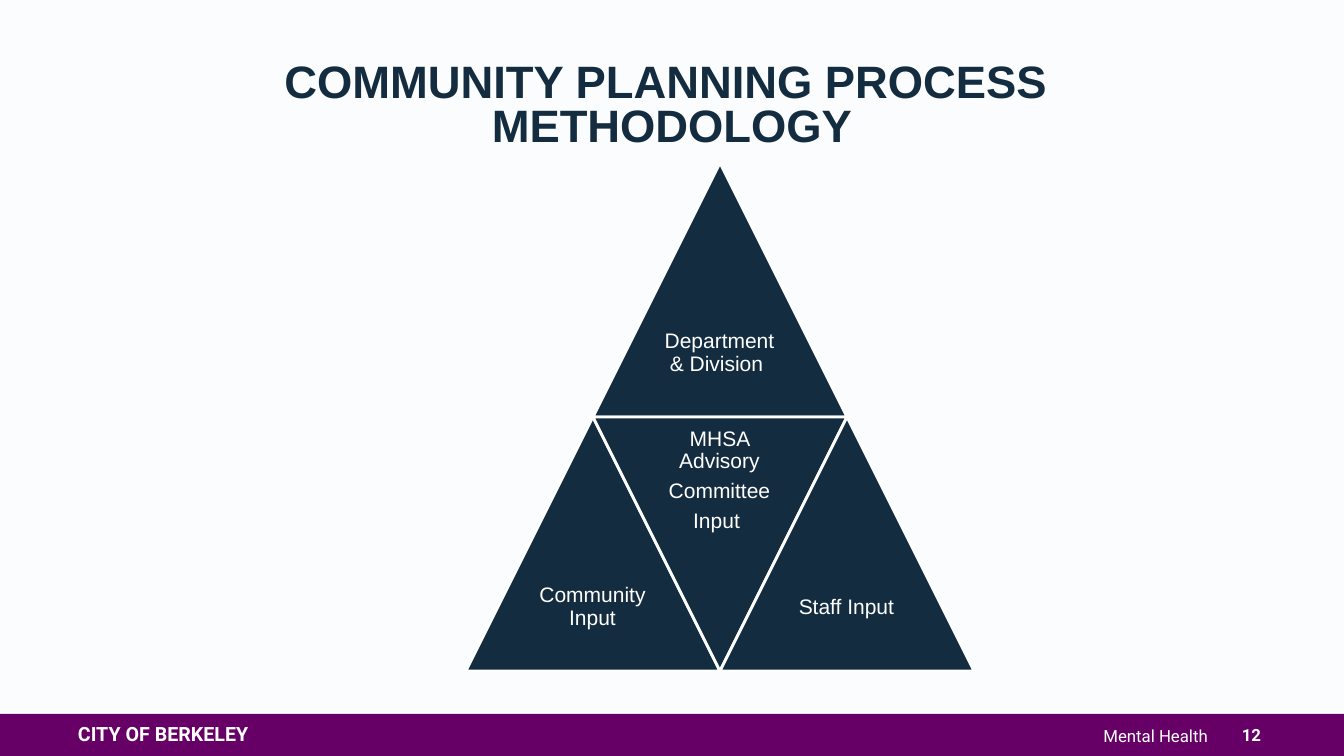
from dataclasses import dataclass

import pptx
import pptx.dml.color
import pptx.enum.shapes
import pptx.enum.text
import pptx.shapes.base
import pptx.text.text
import pptx.util

WIDTH, HEIGHT = 1344, 756
SCALE = 12192000 / WIDTH
NAVY, PURPLE, WHITE, PALE = "142C3F", "660066", "FFFFFF", "FBFCFD"
SIDE = 254
HALF = SIDE // 2
LEFT, TOP = 466, 163
BAR = 714

ALIGN = pptx.enum.text.PP_ALIGN
ANCHOR = pptx.enum.text.MSO_ANCHOR
SHAPE = pptx.enum.shapes.MSO_SHAPE


@dataclass(frozen=True)
class Style:
    size: float
    font: str = "Arial"
    color: str = WHITE
    bold: bool = False
    align: ALIGN = ALIGN.CENTER
    pitch: float = 0.9
    after: int = 0
    anchor: ANCHOR = ANCHOR.MIDDLE


@dataclass(frozen=True)
class Part:
    """One triangle; col counts half sides from the left, row whole sides from the top."""
    col: int
    row: int
    lines: tuple[str, ...]
    down: bool = False


@dataclass(frozen=True)
class Label:
    box: tuple[int, int, int, int]
    text: str
    style: Style


TITLE = Style(32.4, color=NAVY, bold=True, pitch=0.8, anchor=ANCHOR.TOP)
INPUT = Style(15, after=5)

PARTS = [
    Part(1, 0, ("Department & Division ",)),
    Part(0, 1, ("Community Input",)),
    Part(1, 1, ("MHSA Advisory", "Committee", "Input "), down=True),
    Part(2, 1, ("Staff Input",)),
]

FOOTER = [
    Label((68, 701, 252, 69), "CITY OF BERKELEY",
          Style(14, "Roboto", bold=True, align=ALIGN.LEFT)),
    Label((588, 703, 630, 69), "Mental Health",
          Style(12, "Roboto", align=ALIGN.RIGHT)),
    Label((1218, BAR, 67, HEIGHT - BAR), "12",
          Style(12, "Roboto", bold=True, pitch=1.0)),
]


def px(count: int) -> pptx.util.Emu:
    return pptx.util.Emu(round(count * SCALE))


def rgb(code: str) -> pptx.dml.color.RGBColor:
    return pptx.dml.color.RGBColor.from_string(code)


def paint(shape: pptx.shapes.base.BaseShape, color: str, edge: int = 0) -> None:
    """Give a flat fill and a white edge, or no edge when its width is 0."""
    shape.shadow.inherit = False
    shape.fill.solid()
    shape.fill.fore_color.rgb = rgb(color)
    if edge:
        shape.line.color.rgb = rgb(WHITE)
        shape.line.width = pptx.util.Pt(edge)
    else:
        shape.line.fill.background()


def write(frame: pptx.text.text.TextFrame, lines: tuple[str, ...],
          style: Style, pad: tuple[int, int] = (10, 5)) -> None:
    frame.word_wrap = True
    frame.auto_size = pptx.enum.text.MSO_AUTO_SIZE.NONE
    frame.vertical_anchor = style.anchor
    frame.margin_left = frame.margin_right = px(pad[0])
    frame.margin_top = frame.margin_bottom = px(pad[1])
    for index, line in enumerate(lines):
        para = frame.add_paragraph() if index else frame.paragraphs[0]
        para.alignment = style.align
        para.line_spacing = style.pitch
        para.space_before = pptx.util.Pt(0)
        para.space_after = pptx.util.Pt(style.after)
        run = para.add_run()
        run.text = line
        run.font.name = style.font
        run.font.size = pptx.util.Pt(style.size)
        run.font.bold = style.bold
        run.font.color.rgb = rgb(style.color)


def main() -> None:
    deck = pptx.Presentation()
    deck.slide_width, deck.slide_height = px(WIDTH), px(HEIGHT)
    slide = deck.slides.add_slide(deck.slide_layouts.get_by_name("Title Only"))
    slide.background.fill.solid()
    slide.background.fill.fore_color.rgb = rgb(PALE)

    bar = slide.shapes.add_shape(
        SHAPE.RECTANGLE, px(0), px(BAR), px(WIDTH), px(HEIGHT - BAR))
    paint(bar, PURPLE)
    for label in FOOTER:
        box = slide.shapes.add_textbox(*map(px, label.box))
        write(box.text_frame, (label.text,), label.style)

    title = slide.shapes.title
    title.left, title.top, title.width, title.height = map(px, (85, 59, 1174, 104))
    write(title.text_frame, ("COMMUNITY PLANNING PROCESS ", "METHODOLOGY"), TITLE)

    group = slide.shapes.add_group_shape()
    for part in PARTS:
        left, top = LEFT + part.col * HALF, TOP + part.row * SIDE
        shape = group.shapes.add_shape(
            SHAPE.ISOSCELES_TRIANGLE, px(left), px(top), px(SIDE), px(SIDE))
        shape.rotation = 180 if part.down else 0
        paint(shape, NAVY, 2)
        drop = 0 if part.down else HALF
        box = group.shapes.add_textbox(
            px(left + HALF // 2), px(top + drop), px(HALF), px(HALF))
        write(box.text_frame, part.lines, INPUT, (6, 6))

    deck.save("out.pptx")


if __name__ == "__main__":
    main()
